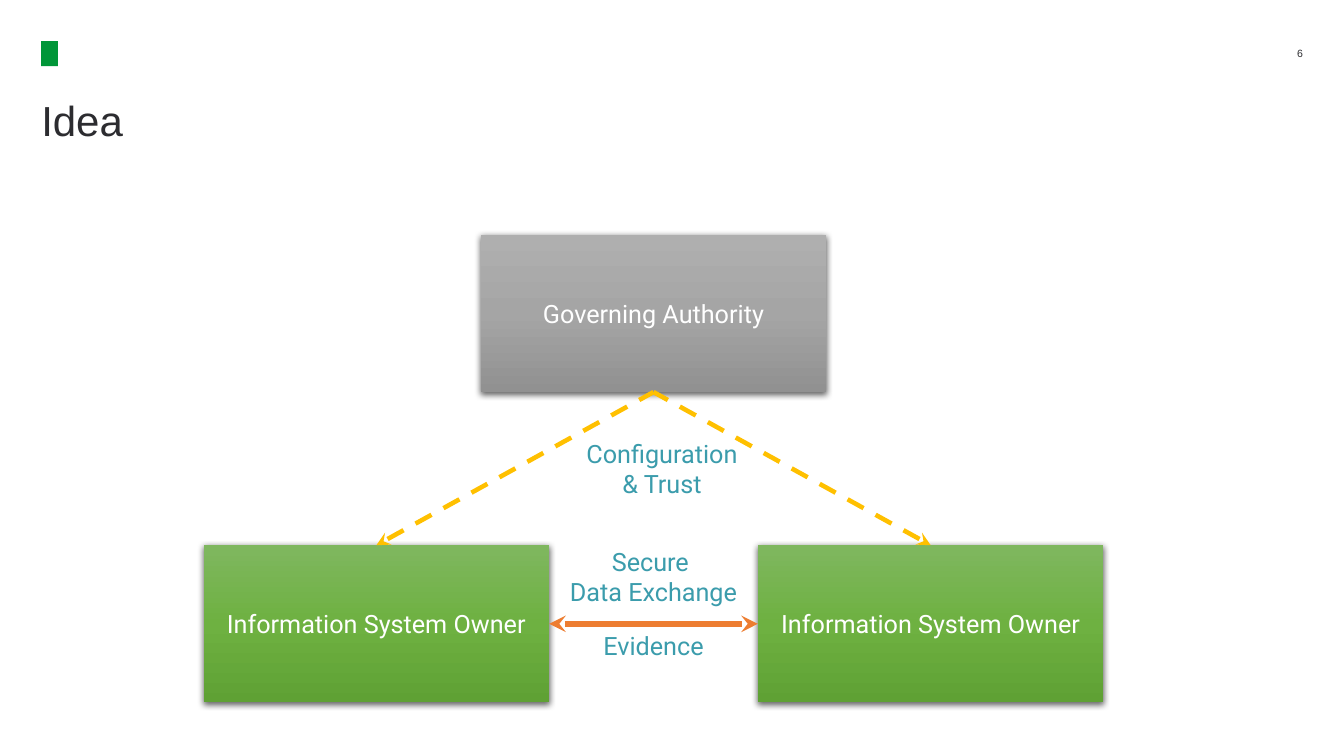
from collections import namedtuple
from copy import deepcopy
from dataclasses import dataclass

from lxml.etree import SubElement
from pptx import Presentation
from pptx.dml.color import RGBColor
from pptx.enum.dml import MSO_LINE
from pptx.enum.shapes import MSO_CONNECTOR, MSO_SHAPE
from pptx.enum.text import MSO_ANCHOR, PP_ALIGN
from pptx.oxml.ns import qn
from pptx.util import Cm, Pt

Box = namedtuple("Box", "left top width height")
TOP, LEFT, BOTTOM, RIGHT = range(4)


@dataclass(frozen=True)
class Theme:
    heading_font: str = "Arial"
    diagram_font: str = "Roboto"
    title_size: float = 30
    diagram_size: float = 18
    number_size: float = 7.5
    ink: str = "2C2C30"
    white: str = "FFFFFF"
    label: str = "3B9CAC"
    mark: str = "009638"
    exchange: str = "ED7D31"
    trust: str = "FFC000"
    authority: tuple = ("AFAFAF", "A5A5A5", "919191")
    owner: tuple = ("7FB75F", "6EB141", "5FA134")


THEME = Theme()


def lengths(box):
    return [Cm(value) for value in box]


def style_paragraph(paragraph, font_name, size, color, alignment):
    paragraph.alignment = alignment
    paragraph.font.name = font_name
    paragraph.font.size = Pt(size)
    paragraph.font.color.rgb = RGBColor.from_string(color)


def remove_insets(frame):
    frame.margin_left = frame.margin_right = 0
    frame.margin_top = frame.margin_bottom = 0


def fill_gradient(shape, colors):
    """Fill from top to bottom with three evenly spaced colours."""
    shape.fill.gradient()
    shape.fill.gradient_angle = 270
    stop_list = shape._element.spPr.find(qn("a:gradFill")).find(qn("a:gsLst"))
    stop_list.append(deepcopy(stop_list[0]))
    for index, (stop, color) in enumerate(zip(shape.fill.gradient_stops, colors)):
        stop.position = index / 2
        stop.color.rgb = RGBColor.from_string(color)


def add_soft_shadow(shape):
    shape.shadow.inherit = False
    effects = shape._element.spPr.find(qn("a:effectLst"))
    shadow = SubElement(effects, qn("a:outerShdw"), blurRad=str(Pt(4.5)),
                        dist=str(Pt(1.5)), dir="5400000", algn="ctr", rotWithShape="0")
    color = SubElement(shadow, qn("a:srgbClr"), val="000000")
    SubElement(color, qn("a:alpha"), val="62000")


def add_party(slide, box, name, colors):
    shape = slide.shapes.add_shape(MSO_SHAPE.RECTANGLE, *lengths(box))
    fill_gradient(shape, colors)
    shape.line.fill.background()
    add_soft_shadow(shape)
    frame = shape.text_frame
    frame.text = name
    frame.vertical_anchor = MSO_ANCHOR.MIDDLE
    style_paragraph(frame.paragraphs[0], THEME.diagram_font, THEME.diagram_size,
                    THEME.white, PP_ALIGN.CENTER)
    return shape


def join(slide, start, start_side, end, end_side, color, width, dash=None, both_ends=False):
    """Connect two parties, with an arrowhead at the start or at both ends."""
    connector = slide.shapes.add_connector(MSO_CONNECTOR.STRAIGHT, 0, 0, 0, 0)
    connector.begin_connect(start, start_side)
    connector.end_connect(end, end_side)
    connector.line.color.rgb = RGBColor.from_string(color)
    connector.line.width = Pt(width)
    if dash:
        connector.line.dash_style = dash
    outline = connector.line._get_or_add_ln()
    SubElement(outline, qn("a:headEnd"), type="stealth")
    if both_ends:
        SubElement(outline, qn("a:tailEnd"), type="stealth")
    SubElement(connector._element.spPr, qn("a:effectLst"))


def add_label(slide, box, text):
    frame = slide.shapes.add_textbox(*lengths(box)).text_frame
    frame.word_wrap = True
    frame.text = text
    for paragraph in frame.paragraphs:
        style_paragraph(paragraph, THEME.diagram_font, THEME.diagram_size,
                        THEME.label, PP_ALIGN.CENTER)
    return frame


def add_header(slide, box):
    """Place the brand mark, the page number and the title."""
    mark = slide.shapes.add_shape(
        MSO_SHAPE.RECTANGLE, *lengths((box.left, box.top, 0.42, 0.63)))
    mark.shadow.inherit = False
    mark.fill.solid()
    mark.fill.fore_color.rgb = RGBColor.from_string(THEME.mark)
    mark.line.fill.background()

    title = slide.shapes.title
    title.left, title.top, title.width, title.height = lengths(
        (box.left, box.top + 1.22, box.width, box.height - 1.22))
    title.text_frame.text = "Idea"
    title.text_frame.vertical_anchor = MSO_ANCHOR.TOP
    remove_insets(title.text_frame)
    heading = title.text_frame.paragraphs[0]
    style_paragraph(heading, THEME.heading_font, THEME.title_size, THEME.ink, PP_ALIGN.LEFT)
    heading.line_spacing = 1.1

    number = slide.shapes.add_textbox(
        *lengths((box.left + box.width - 1, box.top, 1, 0.62))).text_frame
    number.text = "6"
    number.vertical_anchor = MSO_ANCHOR.MIDDLE
    remove_insets(number)
    style_paragraph(number.paragraphs[0], THEME.heading_font, THEME.number_size,
                    THEME.ink, PP_ALIGN.RIGHT)


def add_trust_triangle(slide, box):
    """Place the authority above two owners, with their links and labels."""
    width, height = 8.71, 3.96
    owner_top = box.top + box.height - height
    authority = add_party(
        slide, Box(box.left + (box.width - width) / 2, box.top, width, height),
        "Governing Authority", THEME.authority)
    owners = [
        add_party(slide, Box(left, owner_top, width, height),
                  "Information System Owner", THEME.owner)
        for left in (box.left, box.left + box.width - width)
    ]
    join(slide, owners[0], RIGHT, owners[1], LEFT, THEME.exchange, 4, both_ends=True)
    for owner in owners:
        join(slide, owner, TOP, authority, BOTTOM, THEME.trust, 3.25, MSO_LINE.DASH)

    add_label(slide, Box(box.left + 7.82, box.top + 5, 7.47, 1.8),
              "Configuration\n& Trust")
    exchange = add_label(slide, Box(box.left + 8.94, owner_top - 0.1, 4.8, 3.18),
                         "Secure \vData Exchange\nEvidence")
    exchange.paragraphs[1].space_before = Pt(17)


def main():
    presentation = Presentation()
    presentation.slide_width, presentation.slide_height = Cm(33.87), Cm(19.05)
    slide = presentation.slides.add_slide(presentation.slide_layouts[5])
    add_header(slide, Box(1.04, 1.04, 31.8, 4.65))
    add_trust_triangle(slide, Box(5.13, 5.92, 22.68, 11.78))
    presentation.save("out.pptx")


if __name__ == "__main__":
    main()
